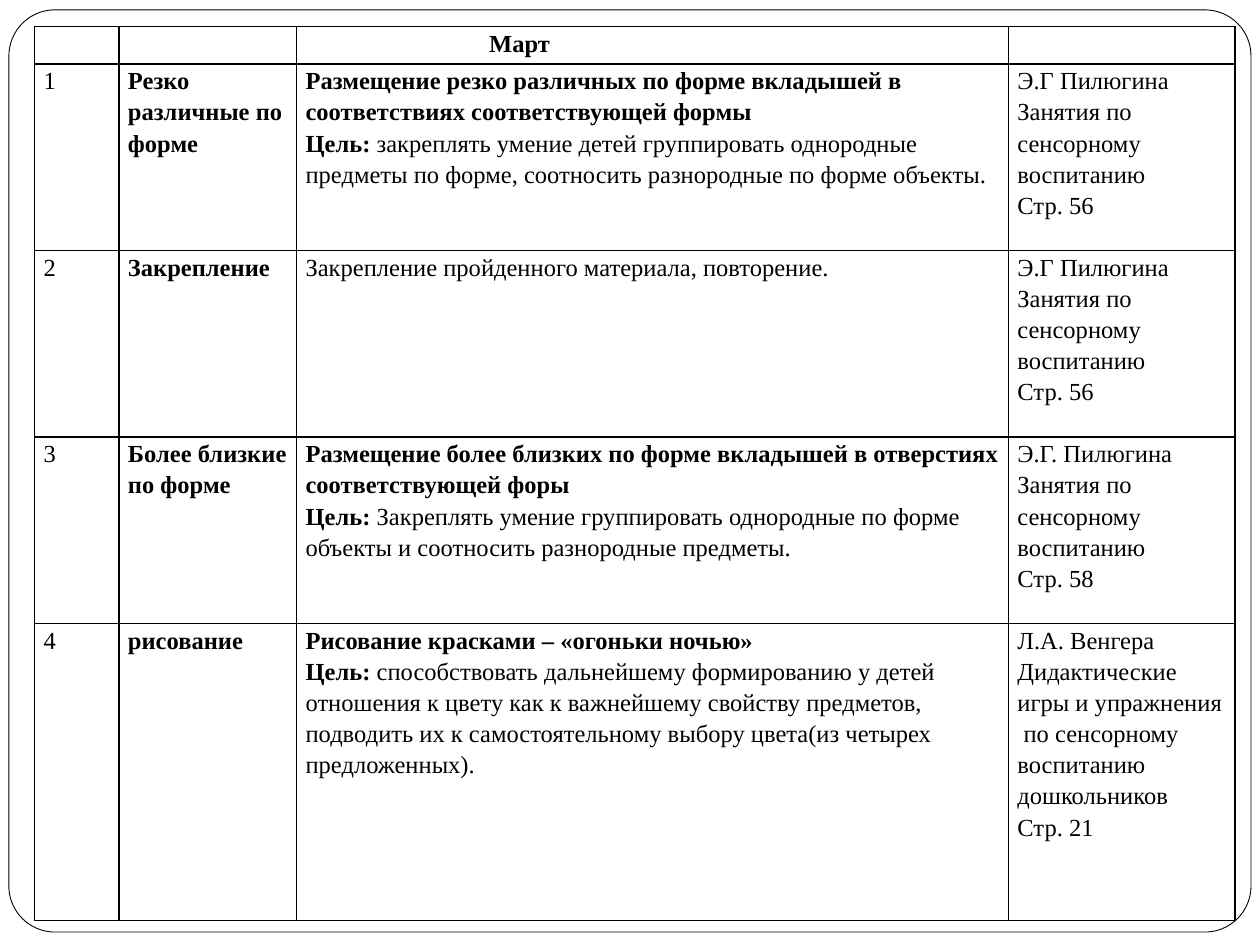
from lxml.etree import SubElement
from pptx import Presentation
from pptx.dml.color import RGBColor
from pptx.enum.shapes import MSO_SHAPE
from pptx.oxml.ns import qn
from pptx.util import Cm, Pt

COLORS = {"ink": "000000", "paper": "FFFFFF"}
FONT = "Times New Roman"
COLUMNS = [1.7, 3.58, 14.35, 4.57]
ROWS = [0.76, 3.76, 3.76, 3.76, 5.99]
SENSORY = "Занятия по сенсорному воспитанию"
GOAL = "Цель:"
LESSONS = [
    ("Резко различные по форме",
     "Размещение резко различных по форме вкладышей в соответствиях соответствующей формы",
     " закреплять умение детей группировать однородные предметы по форме, "
     "соотносить разнородные по форме объекты.",
     ["Э.Г Пилюгина", SENSORY, "Стр. 56"]),
    ("Закрепление", "", "Закрепление пройденного материала, повторение.",
     ["Э.Г Пилюгина", SENSORY, "Стр. 56"]),
    ("Более близкие по форме",
     "Размещение более близких по форме вкладышей в отверстиях соответствующей форы",
     " Закреплять умение группировать однородные по форме объекты "
     "и соотносить разнородные предметы.",
     ["Э.Г. Пилюгина", SENSORY, "Стр. 58"]),
    ("рисование", "Рисование красками – «огоньки ночью»",
     " способствовать дальнейшему формированию у детей отношения к цвету как к "
     "важнейшему свойству предметов, подводить их к самостоятельному выбору "
     "цвета(из четырех предложенных).",
     ["Л.А. Венгера",
      "Дидактические игры и упражнения  по сенсорному воспитанию дошкольников",
      "Стр. 21"]),
]


def rgb(name):
    """Return the named colour."""
    return RGBColor.from_string(COLORS[name])


def add_run(p, text, size=14, bold=False, color="ink"):
    """Append a formatted run to a paragraph."""
    r = p.add_run()
    r.text = text
    r.font.name, r.font.size, r.font.bold = FONT, Pt(size), bold
    r.font.color.rgb = rgb(color)


def add_frame(s):
    """Draw the rounded frame around the slide."""
    sp = s.shapes.add_shape(MSO_SHAPE.ROUNDED_RECTANGLE,
                            Cm(0.18), Cm(0.2), Cm(25.04), Cm(18.59))
    sp.adjustments[0] = 0.05
    sp.shadow.inherit = False
    sp.fill.solid()
    sp.fill.fore_color.rgb = rgb("paper")
    sp.line.color.rgb = rgb("ink")
    sp.line.width = Pt(0.5)


def set_borders(cell, width=1):
    """Give a cell a solid line on each side."""
    tc_pr = cell._tc.get_or_add_tcPr()
    for side in ("lnL", "lnR", "lnT", "lnB"):
        ln = SubElement(tc_pr, qn(f"a:{side}"), w=str(Pt(width)))
        fill = SubElement(ln, qn("a:solidFill"))
        SubElement(fill, qn("a:srgbClr"), val=COLORS["ink"])


def fill_cell(cell, paragraphs, indent=0.18):
    """Write paragraphs of (text, bold) runs into a bordered cell."""
    set_borders(cell)
    cell.fill.background()
    cell.margin_left, cell.margin_right = Cm(indent), Cm(0.18)
    cell.margin_top = cell.margin_bottom = 0
    tf = cell.text_frame
    for i, runs in enumerate(paragraphs):
        p = tf.add_paragraph() if i else tf.paragraphs[0]
        p.line_spacing = 1.15
        for text, bold in runs:
            add_run(p, text, bold=bold)


def lesson_cells(number, topic, title, goal, source):
    """Return the paragraphs of the four cells of a lesson."""
    if title:
        content = [[(title, True)], [(GOAL, True), (goal, False)]]
    else:
        content = [[(goal, False)]]
    return [[[(str(number), False)]], [[(topic, True)]], content,
            [[(line, False)] for line in source]]


def add_plan(s):
    """Add the table with the lessons of the month."""
    table = s.shapes.add_table(len(ROWS), len(COLUMNS), Cm(0.7), Cm(0.53),
                               Cm(sum(COLUMNS)), Cm(sum(ROWS))).table
    table.first_row = table.horz_banding = False
    for column, width in zip(table.columns, COLUMNS):
        column.width = Cm(width)
    for row, height in zip(table.rows, ROWS):
        row.height = Cm(height)
    for col, text in enumerate(["", "", "Март", ""]):
        fill_cell(table.cell(0, col), [[(text, True)]], indent=3.88 if text else 0.18)
    for number, lesson in enumerate(LESSONS, 1):
        for col, paragraphs in enumerate(lesson_cells(number, *lesson)):
            fill_cell(table.cell(number, col), paragraphs)


def main():
    """Build and save the slide."""
    prs = Presentation()
    prs.slide_width, prs.slide_height = Cm(25.4), Cm(19.05)
    s = prs.slides.add_slide(prs.slide_layouts[6])
    add_frame(s)
    add_plan(s)
    prs.save("out.pptx")


if __name__ == "__main__":
    main()
